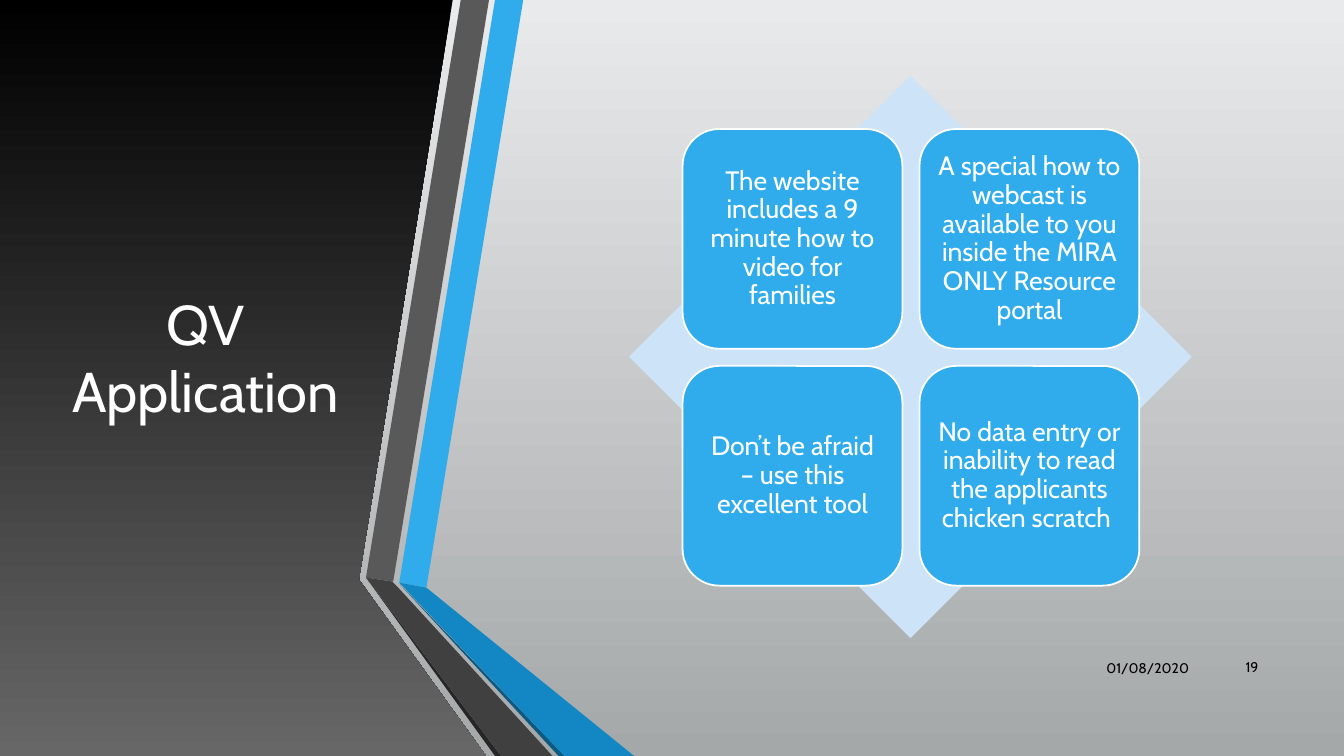
from pptx import Presentation
from pptx.dml.color import RGBColor
from pptx.enum.shapes import MSO_SHAPE
from pptx.enum.text import MSO_ANCHOR, PP_ALIGN
from pptx.util import Pt

PX = 9144
DIAMOND, CARD = MSO_SHAPE.DIAMOND, MSO_SHAPE.ROUNDED_RECTANGLE
MIDDLE = MSO_ANCHOR.MIDDLE
CENTER, RIGHT = PP_ALIGN.CENTER, PP_ALIGN.RIGHT
WHITE, BLACK, BLUE = "FFFFFF", "000000", "30ACEC"


def paint(fill, *colors):
    if len(colors) == 1:
        fill.solid()
        fill.fore_color.rgb = RGBColor.from_string(colors[0])
        return
    fill.gradient()
    fill.gradient_angle = 270
    for stop, color in zip(fill.gradient_stops, colors):
        stop.color.rgb = RGBColor.from_string(color)


def write(shape, text, size=19, color=WHITE, align=CENTER, inset=None, spacing=1.0):
    frame = shape.text_frame
    frame.word_wrap = True
    frame.vertical_anchor = MIDDLE
    if inset is not None:
        frame.margin_left = frame.margin_right = inset * PX
        frame.margin_top = frame.margin_bottom = inset * PX
    paragraph = frame.paragraphs[0]
    paragraph.alignment = align
    paragraph.line_spacing = spacing
    run = paragraph.add_run()
    run.text = text
    run.font.name = "Cabin"
    run.font.size = Pt(size)
    paint(run.font.fill, color)


prs = Presentation()
prs.slide_width, prs.slide_height = 1333 * PX, 750 * PX
slide = prs.slides.add_slide(prs.slide_layouts[6])
shapes = slide.shapes
paint(slide.background.fill, "E9EAEB", "A5A8A9")

facets = [
    ([(0, 0), (449, 0), (356, 575), (482, 750), (0, 750)], [BLACK, "676767"]),
    ([(396, 578), (423, 583), (519, 0), (491, 0)], [BLUE]),
    ([(485, 0), (457, 0), (363, 573), (390, 577)], ["595959"]),
    ([(363, 573), (491, 750), (497, 750)], ["262626"]),
    ([(396, 579), (554, 750), (560, 750)], ["0C5A82"]),
    ([(396, 578), (560, 750), (629, 750), (423, 583)], ["1287C3"]),
    ([(548, 750), (395, 583), (389, 577), (363, 573), (497, 750)], ["404040"]),
]
for points, colors in facets:
    outline = shapes.build_freeform(*points[0], scale=PX)
    outline.add_line_segments(points[1:], close=True)
    facet = outline.convert_to_shape()
    facet.shadow.inherit = False
    facet.line.fill.background()
    paint(facet.fill, *colors)

labels = [
    ("QV Application", (59, 75, 289, 558), 40, WHITE, CENTER),
    ("01/08/2020", (1064, 643, 125, 40), 10, BLACK, RIGHT),
    ("19", (1198, 642, 60, 40), 10, BLACK, RIGHT),
]
for text, box, size, color, align in labels:
    label = shapes.add_textbox(*(PX * value for value in box))
    write(label, text, size=size, color=color, align=align)

diamond = shapes.add_shape(DIAMOND, 624 * PX, 75 * PX, 558 * PX, 558 * PX)
diamond.shadow.inherit = False
diamond.line.fill.background()
paint(diamond.fill, "CDE3F8")

tips = [
    ("The website includes a 9 minute how to video for families", 8),
    ("A special how to webcast is available to you inside the MIRA ONLY Resource portal", 8),
    ("Don’t be afraid – use this excellent tool", 12),
    ("No data entry or inability to read the applicants chicken scratch ", 8),
]
CARD_SIZE, CARD_STEP = 218, 235
for index, (tip, inset) in enumerate(tips):
    row, column = divmod(index, 2)
    left, top = 677 + column * CARD_STEP, 128 + row * CARD_STEP
    card = shapes.add_shape(CARD, left * PX, top * PX, CARD_SIZE * PX, CARD_SIZE * PX)
    card.shadow.inherit = False
    paint(card.fill, BLUE)
    paint(card.line.fill, WHITE)
    card.line.width = Pt(1.25)
    write(card, tip, inset=inset, spacing=0.9)

prs.save("out.pptx")
